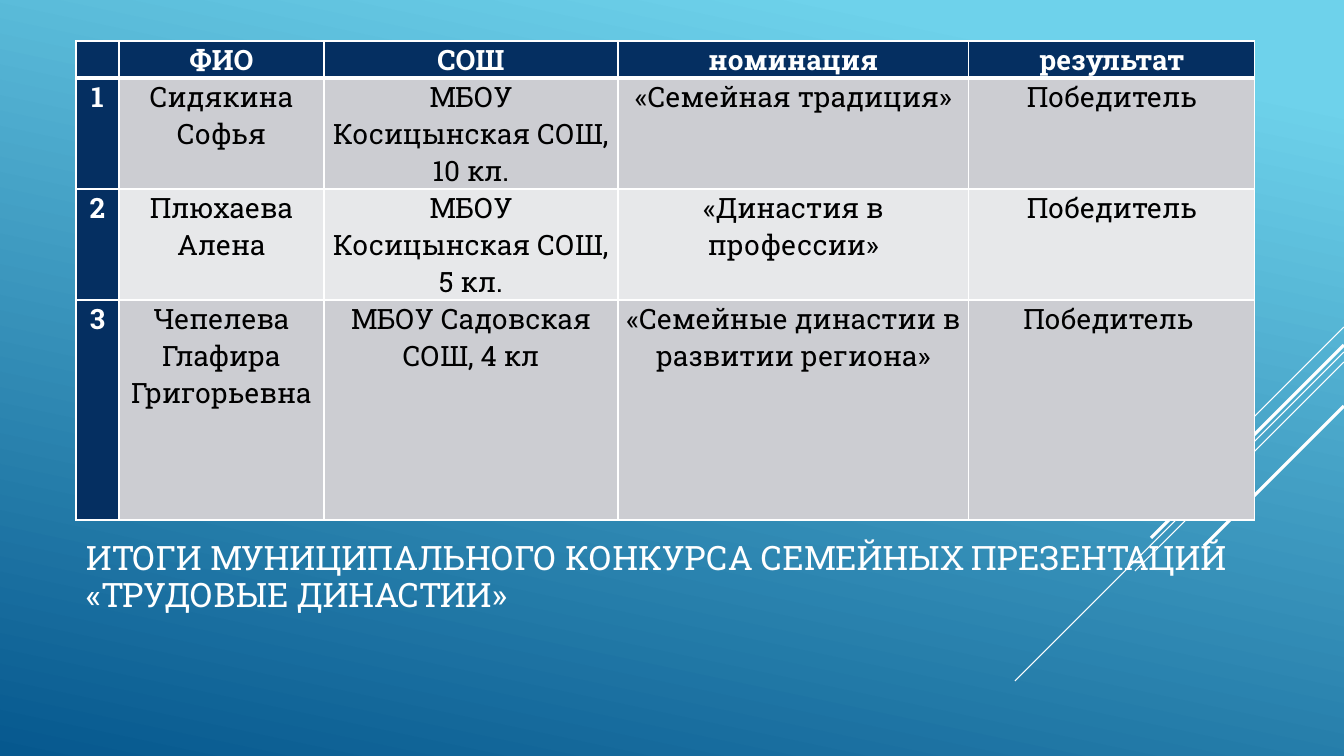
"""Build the slide with the results of the family presentation contest."""
from lxml import etree
from pptx import Presentation
from pptx.dml.color import RGBColor
from pptx.enum.shapes import MSO_CONNECTOR
from pptx.enum.text import MSO_ANCHOR, PP_ALIGN
from pptx.oxml import parse_xml
from pptx.oxml.ns import nsdecls, qn
from pptx.util import Pt

STRAIGHT = MSO_CONNECTOR.STRAIGHT
MIDDLE = MSO_ANCHOR.MIDDLE
CENTER = PP_ALIGN.CENTER
SCALE = 914400 / 100.8
THEME = {
    "font": "Roboto Slab",
    "title_size": 24,
    "table_size": 20,
    "white": "FFFFFF",
    "black": "000000",
    "navy": "052F61",
    "bands": ["E7E8EA", "CCCDD2"],
    "sky": [(0.1, "6ED2EB"), (1.0, "06588E")],
}


def px(length):
    return round(length * SCALE)


def set_font(font, size, color, bold):
    values = {"name": THEME["font"], "size": Pt(size), "bold": bold}
    for name, value in values.items():
        setattr(font, name, value)
    font.color.rgb = RGBColor.from_string(color)


deck = Presentation()
deck.slide_width, deck.slide_height = px(1344), px(756)
page = deck.slides.add_slide(deck.slide_layouts[6])

sky = page.background.fill
sky.gradient()
sky.gradient_angle = 258
for stop, (position, color) in zip(sky.gradient_stops, THEME["sky"]):
    stop.position = position
    stop.color.rgb = RGBColor.from_string(color)

# Each ray falls at 45 degrees from the right edge: start height, run, width.
RAYS = [(327, 101, 0.75), (352, 329, 0.75), (362, 209, 0.75), (345, 193, 2.25), (406, 140, 2.25)]
for top, run, width in RAYS:
    ray = page.shapes.add_connector(STRAIGHT, px(1344), px(top), px(1344 - run), px(top + run))
    ray.line.color.rgb = RGBColor.from_string(THEME["white"])
    ray.line.width = Pt(width)
    etree.SubElement(ray._element.spPr, qn("a:effectLst"))

title = page.shapes.add_textbox(px(76), px(495), px(1190), px(166))
frame = title.text_frame
frame.word_wrap = True
frame.vertical_anchor = MIDDLE
para = frame.paragraphs[0]
para.line_spacing = 0.9
span = para.add_run()
span.text = "ИТОГИ МУНИЦИПАЛЬНОГО КОНКУРСА СЕМЕЙНЫХ ПРЕЗЕНТАЦИЙ «ТРУДОВЫЕ ДИНАСТИИ»"
set_font(span.font, THEME["title_size"], THEME["white"], False)

RESULTS = [
    ["", "ФИО", "СОШ", "номинация", "результат"],
    ["1", "Сидякина Софья", "МБОУ Косицынская СОШ, 10 кл.", "«Семейная традиция»", "Победитель"],
    ["2", "Плюхаева Алена", "МБОУ Косицынская СОШ, 5 кл.", "«Династия в профессии»", "Победитель"],
    ["3", "Чепелева Глафира Григорьевна", "МБОУ Садовская СОШ, 4 кл",
     "«Семейные династии в развитии региона»", "Победитель "],
]
COLUMN_WIDTHS = [43, 205, 294, 351, 286]
ROW_HEIGHTS = [37, 111, 111, 220]
MARGINS = {"margin_left": 7, "margin_right": 7, "margin_top": 0, "margin_bottom": 0}

table = page.shapes.add_table(
    len(ROW_HEIGHTS), len(COLUMN_WIDTHS), px(76), px(41),
    px(sum(COLUMN_WIDTHS)), px(sum(ROW_HEIGHTS))).table
for column, width in zip(table.columns, COLUMN_WIDTHS):
    column.width = px(width)
for row, height in zip(table.rows, ROW_HEIGHTS):
    row.height = px(height)

for row_index, texts in enumerate(RESULTS):
    for column_index, text in enumerate(texts):
        cell = table.cell(row_index, column_index)
        heading = row_index == 0 or column_index == 0
        for name, value in MARGINS.items():
            setattr(cell, name, px(value))
        cell.fill.solid()
        fill_color = THEME["navy"] if heading else THEME["bands"][row_index % 2]
        cell.fill.fore_color.rgb = RGBColor.from_string(fill_color)
        para = cell.text_frame.paragraphs[0]
        para.alignment = CENTER
        if text:
            span = para.add_run()
            span.text = text
            text_color = THEME["white"] if heading else THEME["black"]
            set_font(span.font, THEME["table_size"], text_color, heading)
        thick_side = {0: "B", 1: "T"}.get(row_index)
        for place, side in enumerate("LRTB"):
            width = Pt(3 if side == thick_side else 1)
            border = parse_xml(
                f'<a:ln{side} {nsdecls("a")} w="{width}"><a:solidFill>'
                f'<a:srgbClr val="{THEME["white"]}"/></a:solidFill></a:ln{side}>')
            cell._tc.get_or_add_tcPr().insert(place, border)

deck.save("out.pptx")
